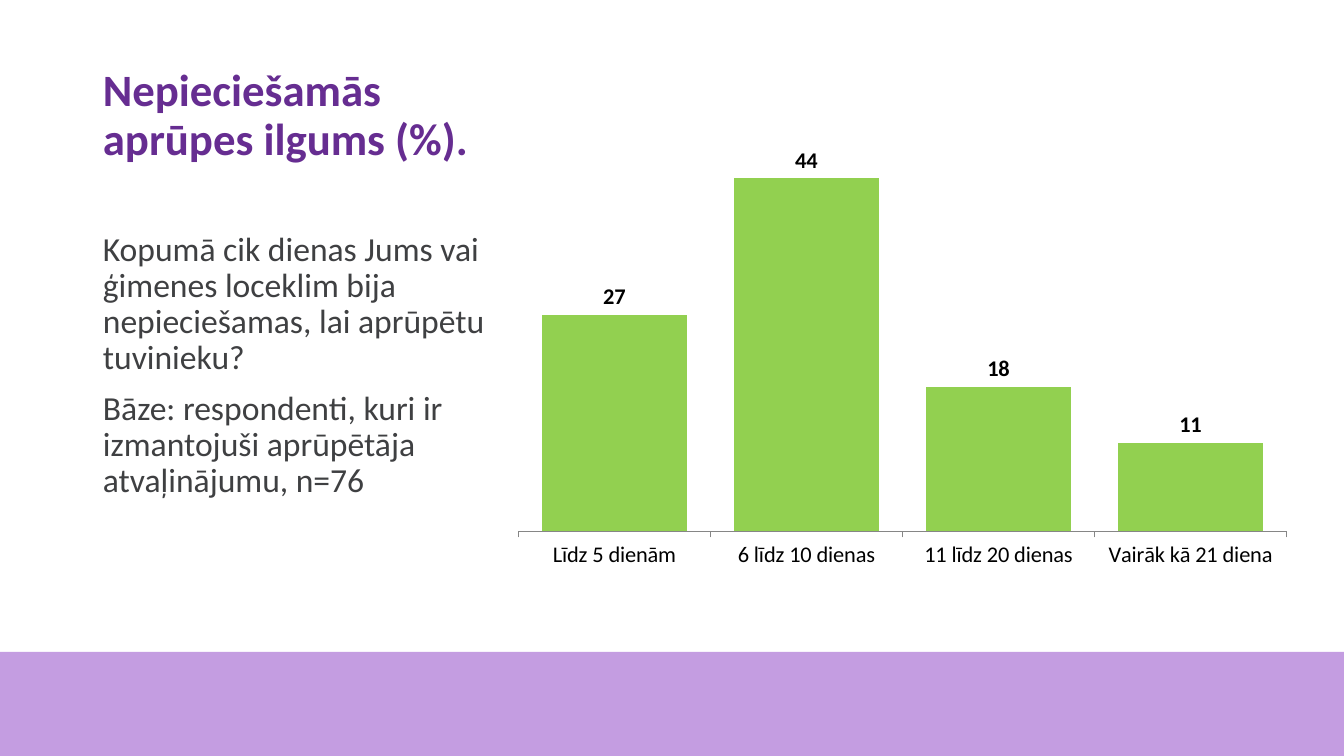
"""Builds the slide on the length of care needed."""
from lxml import etree
from pptx import Presentation
from pptx import util as u
from pptx.chart import data
from pptx.dml import color
from pptx.enum import chart as ch
from pptx.enum import shapes, text
from pptx.oxml import ns

COLOURS = {
    "title": "662D91",
    "body": "3F4042",
    "band": "C49DE1",
    "bar": "92D050",
    "axis": "868686",
    "label": "000000",
}
WIDTH, HEIGHT = 1344, 756


class Slide:
    """Holds the style and the current page; lengths are in px."""

    scale = 914400 / 100.8
    face = "Calibri"

    def __init__(self, deck):
        deck.slide_width, deck.slide_height = self.emu(WIDTH, HEIGHT)
        self.page = deck.slides.add_slide(deck.slide_layouts[6])

    def emu(self, *lengths):
        return [u.Emu(round(length * self.scale)) for length in lengths]

    def colour(self, name):
        return color.RGBColor.from_string(COLOURS[name])

    def style(self, font, size, name, bold=False):
        font.name, font.size, font.bold = self.face, u.Pt(size), bold
        font.color.rgb = self.colour(name)

    def band(self, place, name):
        box = self.page.shapes.add_shape(shapes.MSO_SHAPE.RECTANGLE, *self.emu(*place))
        box.shadow.inherit = False
        box.fill.solid()
        box.fill.fore_color.rgb = self.colour(name)
        box.line.fill.background()

    def words(self, place, lines, size, name, bold=False, anchor=text.MSO_ANCHOR.TOP):
        frame = self.page.shapes.add_textbox(*self.emu(*place)).text_frame
        frame.word_wrap = True
        frame.vertical_anchor = anchor
        frame.text = "\n".join(lines)
        for index, para in enumerate(frame.paragraphs):
            para.line_spacing = 0.9
            para.space_before = u.Pt(10 if index else 0)
            self.style(para.font, size, name, bold)

    def columns(self, place, values, plot_area):
        source = data.CategoryChartData(number_format="0")
        source.categories = list(values)
        source.add_series("Series 1", list(values.values()))
        chart = self.page.shapes.add_chart(
            ch.XL_CHART_TYPE.COLUMN_CLUSTERED, *self.emu(*place), source
        ).chart
        self.style(chart.font, 10, "label")
        chart.has_legend = chart.has_title = False

        days = chart.category_axis
        days.major_tick_mark = ch.XL_TICK_MARK.OUTSIDE
        days.format.line.color.rgb = self.colour("axis")
        days.format.line.width = u.Pt(0.75)
        self.style(days.tick_labels.font, 16, "label")

        share = chart.value_axis
        share.visible = share.has_major_gridlines = False
        share.minimum_scale, share.maximum_scale, share.major_unit = 0, 60, 10

        plot = chart.plots[0]
        plot.vary_by_categories = False
        plot.gap_width, plot.overlap = 32, -20
        series = plot.series[0]
        series.format.fill.solid()
        series.format.fill.fore_color.rgb = self.colour("bar")
        labels = series.data_labels
        labels.show_value = True
        labels.position = ch.XL_LABEL_POSITION.OUTSIDE_END
        labels.number_format, labels.number_format_is_linked = "0", False
        self.style(labels.font, 16, "label", True)
        self.fix_plot(chart, plot_area)

    def fix_plot(self, chart, plot_area):
        area = chart.element.find(".//" + ns.qn("c:plotArea"))
        layout = area.find(ns.qn("c:layout"))
        if layout is None:
            layout = etree.Element(ns.qn("c:layout"))
            area.insert(0, layout)
        manual = etree.SubElement(layout, ns.qn("c:manualLayout"))
        settings = {"layoutTarget": "inner", "xMode": "edge", "yMode": "edge"}
        settings.update(zip("xywh", plot_area))
        for tag, value in settings.items():
            etree.SubElement(manual, ns.qn("c:" + tag), val=str(value))


def main():
    deck = Presentation()
    slide = Slide(deck)
    slide.band((0, 652, WIDTH, HEIGHT - 652), "band")
    slide.words(
        (93, 50, 433, 120), ["Nepieciešamās aprūpes ilgums (%)."],
        32, "title", True, text.MSO_ANCHOR.BOTTOM,
    )
    slide.words(
        (93, 227, 433, 425),
        [
            "Kopumā cik dienas Jums vai ģimenes loceklim bija nepieciešamas, "
            "lai aprūpētu tuvinieku?",
            "Bāze: respondenti, kuri ir izmantojuši aprūpētāja atvaļinājumu, n=76",
        ],
        24, "body",
    )
    slide.columns(
        (485, 50, 835, 602),
        {
            "Līdz 5 dienām": 27,
            "6 līdz 10 dienas": 44,
            "11 līdz 20 dienas": 18,
            "Vairāk kā 21 diena": 11,
        },
        (0.04, 0, 0.92, 0.8),
    )
    deck.save("out.pptx")


if __name__ == "__main__":
    main()
